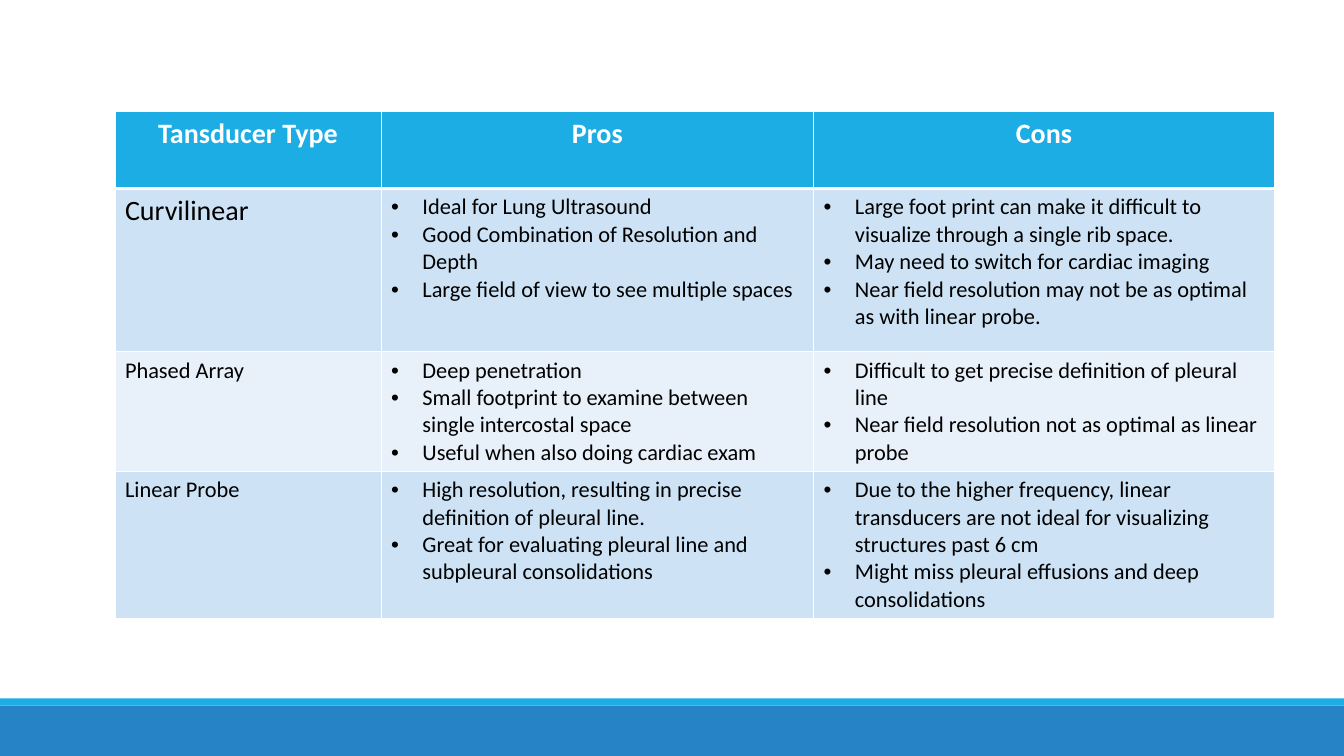
import pptx
import pptx.dml.color
import pptx.enum.shapes
import pptx.enum.text
import pptx.oxml.ns
import pptx.util
from lxml import etree
from pptx.util import Inches

FONT = "Calibri"
WHITE, BLACK = "FFFFFF", "000000"
CYAN, BLUE = "1CADE4", "2683C6"
BAND_FILLS = ["CDE3F5", "E8F1FA"]

COLUMN_WIDTHS = [2.64, 4.29, 4.57]
ROW_HEIGHTS = [0.76, 1.62, 1.18, 1.45]
HEADINGS = ["Tansducer Type", "Pros", "Cons"]
# Name, size of the name, pros, cons
TRANSDUCERS = [
    ("Curvilinear", 20,
     ["Ideal for Lung Ultrasound",
      "Good Combination of Resolution and Depth",
      "Large field of view to see multiple spaces"],
     ["Large foot print can make it difficult to visualize through a single rib space.",
      "May need to switch for cardiac imaging",
      "Near field resolution may not be as optimal as with linear probe."]),
    ("Phased Array", 16,
     ["Deep penetration",
      "Small footprint to examine between single intercostal space",
      "Useful when also doing cardiac exam"],
     ["Difficult to get precise definition of pleural line",
      "Near field resolution not as optimal as linear probe"]),
    ("Linear Probe", 16,
     ["High resolution, resulting in precise definition of pleural line.",
      "Great for evaluating pleural line and subpleural consolidations"],
     ["Due to the higher frequency, linear transducers are not ideal for "
      "visualizing structures past 6 cm",
      "Might miss pleural effusions and deep consolidations"]),
]


def color(hex_string):
    return pptx.dml.color.RGBColor.from_string(hex_string)


def add_element(parent, tag, **attributes):
    return etree.SubElement(parent, pptx.oxml.ns.qn(tag), attributes)


def add_bar(slide, top, height, fill):
    bar = slide.shapes.add_shape(
        pptx.enum.shapes.MSO_SHAPE.RECTANGLE,
        Inches(0), Inches(top), Inches(13.33), Inches(height))
    bar.shadow.inherit = False
    bar.fill.solid()
    bar.fill.fore_color.rgb = color(fill)
    bar.line.fill.background()


def add_bullet(paragraph):
    properties = paragraph._p.get_or_add_pPr()
    properties.set("marL", str(Inches(0.31)))
    properties.set("indent", str(-Inches(0.31)))
    add_element(properties, "a:buFont", typeface="Arial")
    add_element(properties, "a:buChar", char="•")


def write_text(text_frame, lines, size=16, text_color=BLACK, bold=False,
               centered=False, bulleted=False):
    for index, line in enumerate(lines):
        paragraph = text_frame.paragraphs[0] if index == 0 else text_frame.add_paragraph()
        if bulleted:
            add_bullet(paragraph)
        if centered:
            paragraph.alignment = pptx.enum.text.PP_ALIGN.CENTER
        run = paragraph.add_run()
        run.text = line
        run.font.name = FONT
        run.font.size = pptx.util.Pt(size)
        run.font.bold = bold
        run.font.color.rgb = color(text_color)


def style_cell(cell, fill, top=1, bottom=1):
    """Fill a cell and give it white borders, with widths in points."""
    properties = cell._tc.get_or_add_tcPr()
    for side, width in (("L", 1), ("R", 1), ("T", top), ("B", bottom)):
        border = add_element(properties, f"a:ln{side}", w=str(pptx.util.Pt(width)))
        solid_fill = add_element(border, "a:solidFill")
        add_element(solid_fill, "a:srgbClr", val=WHITE)
    cell.fill.solid()
    cell.fill.fore_color.rgb = color(fill)


def add_transducer_table(slide):
    table = slide.shapes.add_table(
        len(ROW_HEIGHTS), len(COLUMN_WIDTHS), Inches(1.14), Inches(1.11),
        Inches(sum(COLUMN_WIDTHS)), Inches(sum(ROW_HEIGHTS))).table
    for column, width in zip(table.columns, COLUMN_WIDTHS):
        column.width = Inches(width)
    for row, height in zip(table.rows, ROW_HEIGHTS):
        row.height = Inches(height)

    for cell, heading in zip(table.rows[0].cells, HEADINGS):
        style_cell(cell, CYAN, bottom=3)
        write_text(cell.text_frame, [heading], size=20, text_color=WHITE,
                   bold=True, centered=True)

    for index, (name, name_size, pros, cons) in enumerate(TRANSDUCERS):
        cells = list(table.rows[index + 1].cells)
        for cell in cells:
            style_cell(cell, BAND_FILLS[index % 2], top=3 if index == 0 else 1)
        write_text(cells[0].text_frame, [name], size=name_size)
        write_text(cells[1].text_frame, pros, bulleted=True)
        write_text(cells[2].text_frame, cons, bulleted=True)


def main():
    presentation = pptx.Presentation()
    presentation.slide_width = Inches(13.33)
    presentation.slide_height = Inches(7.5)
    slide = presentation.slides.add_slide(presentation.slide_layouts[6])
    add_bar(slide, 7, 0.5, BLUE)
    add_bar(slide, 6.93, 0.07, CYAN)
    add_transducer_table(slide)
    presentation.save("out.pptx")


if __name__ == "__main__":
    main()
